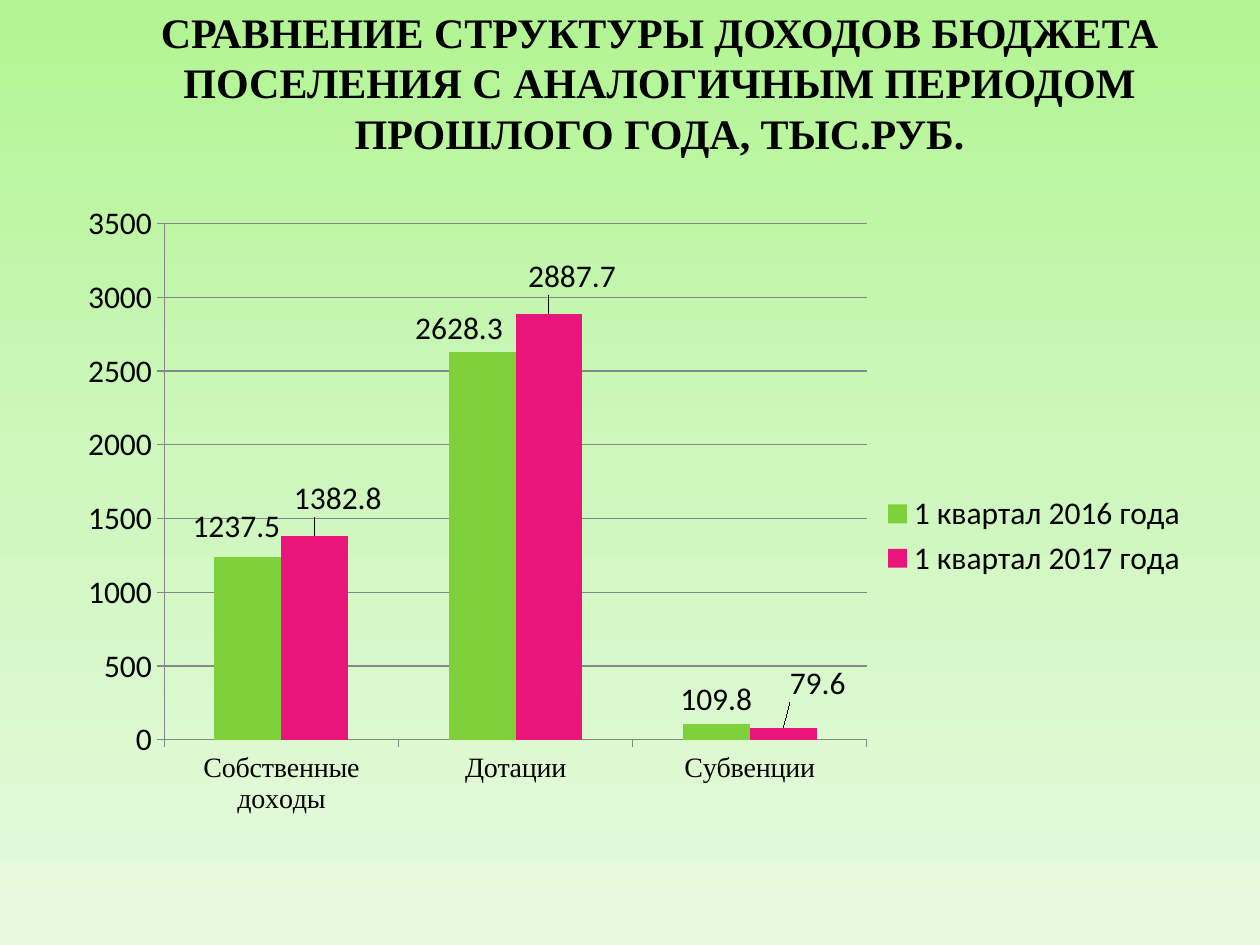
from lxml.etree import SubElement
from pptx import Presentation
from pptx.chart.data import CategoryChartData
from pptx.dml.color import RGBColor
from pptx.enum.chart import XL_CHART_TYPE, XL_LABEL_POSITION, XL_LEGEND_POSITION, XL_TICK_MARK
from pptx.enum.text import MSO_AUTO_SIZE, PP_ALIGN
from pptx.oxml import parse_xml
from pptx.oxml.ns import qn
from pptx.util import Inches, Pt

TITLE = ("СРАВНЕНИЕ СТРУКТУРЫ ДОХОДОВ БЮДЖЕТА ПОСЕЛЕНИЯ "
         "С АНАЛОГИЧНЫМ ПЕРИОДОМ ПРОШЛОГО ГОДА, ТЫС.РУБ.")
CATEGORIES = ["Собственные доходы", "Дотации", "Субвенции"]
QUARTERS = [
    ("1 квартал 2016 года", [1237.5, 2628.3, 109.8], "7FD13B",
     {0: (-0.01, -0.01), 1: (-0.02, 0)}),
    ("1 квартал 2017 года", [1382.8, 2887.7, 79.6], "EA157A",
     {0: (0.02, -0.02), 1: (0.02, -0.02), 2: (0.03, -0.03)}),
]
BACKGROUND_STOPS = [(0, "B2F592"), (50, "CEF7BD"), (100, "E7FADF")]


def color(value):
    """Turn a hex string into a colour."""
    return RGBColor.from_string(value)


def style_font(font, name, size, bold=False):
    """Set face, size and weight of black text."""
    font.name, font.size, font.bold = name, Pt(size), bold
    font.color.rgb = color("000000")


def paint_background(page, stops):
    """Fill the page with a gradient running from top to bottom."""
    fill = page.background.fill
    fill.gradient()
    fill.gradient_angle = 270
    stop_list = page.background._cSld.find(".//" + qn("a:gsLst"))
    for stop in list(stop_list):
        stop_list.remove(stop)
    for percent, value in stops:
        stop = SubElement(stop_list, qn("a:gs"), pos=str(percent * 1000))
        SubElement(stop, qn("a:srgbClr"), val=value)


def add_title(page, text):
    """Add the centred heading."""
    box = page.shapes.add_textbox(Inches(0.78), Inches(0), Inches(8.91), Inches(1.31))
    frame = box.text_frame
    frame.word_wrap = True
    frame.auto_size = MSO_AUTO_SIZE.SHAPE_TO_FIT_TEXT
    para = frame.paragraphs[0]
    para.alignment = PP_ALIGN.CENTER
    span = para.add_run()
    span.text = text
    style_font(span.font, "Times New Roman", 24, True)


def manual_layout(**settings):
    """Make a chart layout element from its settings."""
    layout = parse_xml(
        '<c:layout xmlns:c="http://schemas.openxmlformats.org/drawingml/2006/chart">'
        "<c:manualLayout/></c:layout>")
    for tag, value in settings.items():
        SubElement(layout[0], qn(f"c:{tag}"), val=str(value))
    return layout


def place_plot(chart):
    """Fix the inner plot area within the chart."""
    area = chart._chartSpace.find(".//" + qn("c:plotArea"))
    for layout in area.findall(qn("c:layout")):
        area.remove(layout)
    area.insert(0, manual_layout(layoutTarget="inner", xMode="edge", yMode="edge",
                                 x=0.1, y=0.04, w=0.61, h=0.76))


def style_series(series, fill, offsets):
    """Colour the bars and show their values, some of them shifted."""
    series.format.fill.solid()
    series.format.fill.fore_color.rgb = color(fill)
    series.data_labels.show_value = True
    series.data_labels.position = XL_LABEL_POSITION.OUTSIDE_END
    for index in offsets:
        series.points[index].data_label.position = XL_LABEL_POSITION.OUTSIDE_END
    for label in series._element.iter(qn("c:dLbl")):
        x, y = offsets[int(label[0].get("val"))]
        label.insert(1, manual_layout(x=x, y=y))


def style_axes(chart):
    """Set scale, grid lines and fonts of both axes."""
    value_axis, category_axis = chart.value_axis, chart.category_axis
    value_axis.minimum_scale, value_axis.maximum_scale = 0, 3500
    value_axis.major_unit = 500
    value_axis.has_major_gridlines = True
    value_axis.major_tick_mark = category_axis.major_tick_mark = XL_TICK_MARK.OUTSIDE
    for part in (value_axis, category_axis, value_axis.major_gridlines):
        part.format.line.color.rgb = color("878787")
        part.format.line.width = Pt(0.75)
    style_font(category_axis.tick_labels.font, "Times New Roman", 16)


def add_income_chart(page):
    """Add the clustered columns comparing both quarters."""
    data = CategoryChartData()
    data.categories = CATEGORIES
    for name, values, _, _ in QUARTERS:
        data.add_series(name, values)
    chart = page.shapes.add_chart(
        XL_CHART_TYPE.COLUMN_CLUSTERED, Inches(0.39), Inches(1.56),
        Inches(9.14), Inches(5.39), data).chart
    chart.has_title = False
    style_font(chart.font, "Calibri", 18)
    chart.has_legend = True
    chart.legend.position = XL_LEGEND_POSITION.RIGHT
    chart.legend.include_in_layout = False
    plot = chart.plots[0]
    plot.vary_by_categories = False
    plot.gap_width, plot.overlap = 150, 0
    for series, (_, _, fill, offsets) in zip(plot.series, QUARTERS):
        style_series(series, fill, offsets)
    style_axes(chart)
    place_plot(chart)


def main():
    """Build and save the deck."""
    deck = Presentation()
    deck.slide_width, deck.slide_height = Inches(10), Inches(7.5)
    page = deck.slides.add_slide(deck.slide_layouts[6])
    paint_background(page, BACKGROUND_STOPS)
    add_title(page, TITLE)
    add_income_chart(page)
    deck.save("out.pptx")


if __name__ == "__main__":
    main()
